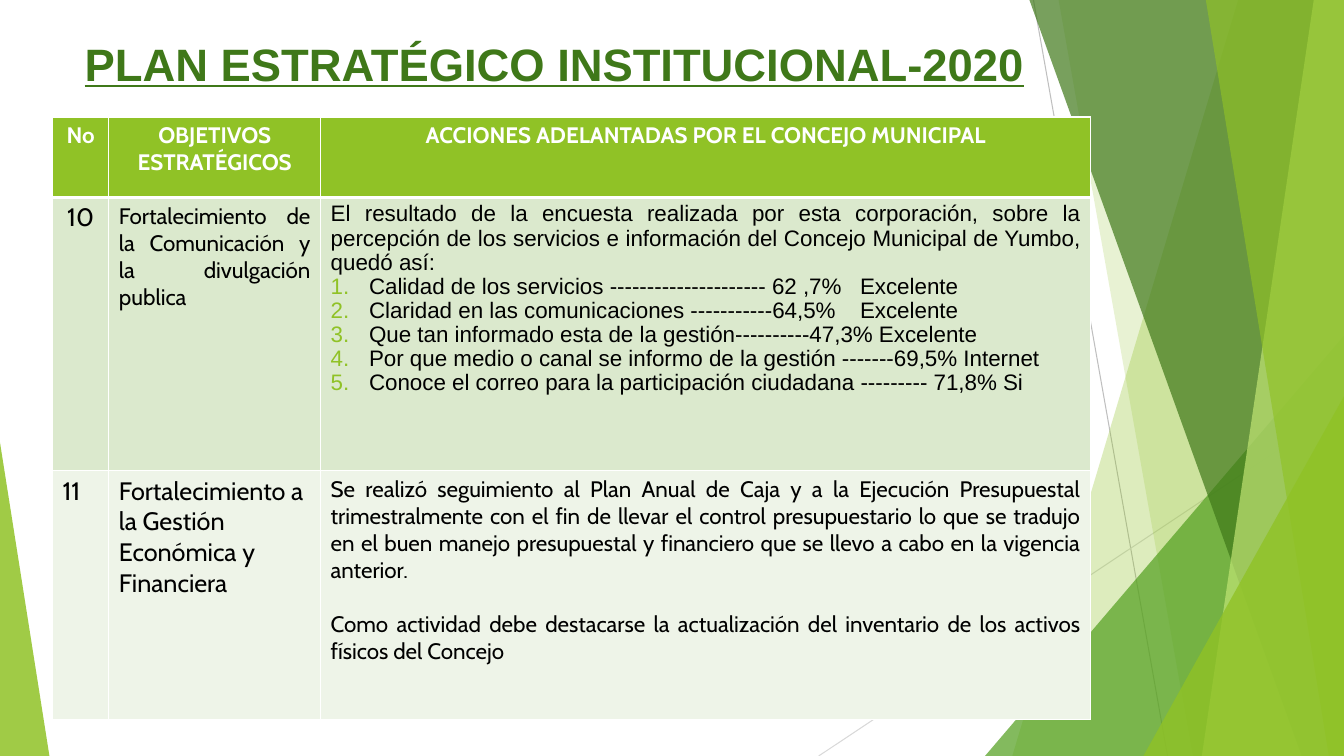
from lxml.etree import SubElement
from pptx import Presentation
from pptx.dml.color import RGBColor
from pptx.enum.shapes import MSO_CONNECTOR, MSO_SHAPE
from pptx.enum.text import MSO_ANCHOR, PP_ALIGN
from pptx.oxml.ns import qn
from pptx.util import Inches, Pt

WHITE = RGBColor(0xFF, 0xFF, 0xFF)
BLACK = RGBColor(0, 0, 0)
LIME = RGBColor(0x90, 0xC2, 0x26)
LIGHT_LIME = RGBColor(0xC0, 0xE4, 0x74)
GREEN = RGBColor(0x54, 0xA0, 0x21)
DARK_GREEN = RGBColor(0x3F, 0x78, 0x19)
ROW_GREEN = RGBColor(0xDB, 0xE9, 0xCD)
ROW_PALE = RGBColor(0xEE, 0xF4, 0xE8)
GRAY = RGBColor(0xBF, 0xBF, 0xBF)
LIGHT_GRAY = RGBColor(0xD9, 0xD9, 0xD9)

WIDTH, HEIGHT = 13.33, 7.5
CENTER, LEFT, JUSTIFY = PP_ALIGN.CENTER, PP_ALIGN.LEFT, PP_ALIGN.JUSTIFY

HEADERS = ["No", "OBJETIVOS ESTRATÉGICOS", "ACCIONES ADELANTADAS POR EL CONCEJO MUNICIPAL"]
SURVEY_INTRO = ("El resultado de la encuesta realizada por esta corporación, sobre la percepción "
                "de los servicios e información del Concejo Municipal de Yumbo, quedó así:")
SURVEY_RESULTS = [
    "Calidad de los servicios --------------------- 62 ,7%\tExcelente",
    "Claridad en las comunicaciones -----------64,5%\tExcelente",
    "Que tan informado esta de la gestión----------47,3% Excelente",
    "Por que medio o canal se informo de la gestión -------69,5% Internet",
    "Conoce el correo para la participación ciudadana --------- 71,8% Si",
]
BUDGET_ACTIONS = [
    "Se realizó seguimiento al Plan Anual de Caja y a la Ejecución Presupuestal "
    "trimestralmente con el fin de llevar el control presupuestario lo que se tradujo en el "
    "buen manejo presupuestal y financiero que se llevo a cabo en la vigencia anterior.",
    "Como actividad debe destacarse la actualización del inventario de los activos físicos "
    "del Concejo",
]


def paint(sp, color, opacity):
    """Fill a shape with a color at the given opacity in percent, without outline."""
    sp.shadow.inherit = False
    sp.line.fill.background()
    sp.fill.solid()
    sp.fill.fore_color.rgb = color
    clr = sp._element.spPr.find(qn("a:solidFill"))[0]
    SubElement(clr, qn("a:alpha"), val=str(opacity * 1000))


def add_thin_line(slide, start, end, color):
    line = slide.shapes.add_connector(MSO_CONNECTOR.STRAIGHT, *map(Inches, start + end))
    line.line.color.rgb = color
    line.line.width = Pt(0.75)
    SubElement(line._element.spPr, qn("a:effectLst"))


def add_band(slide, top_x, bottom_x, color, opacity):
    """Add a full-height band from a slanted left edge to the right edge of the slide."""
    points = [(top_x, 0), (WIDTH, 0), (WIDTH, HEIGHT), (bottom_x, HEIGHT)]
    points = [(Inches(x), Inches(y)) for x, y in points]
    builder = slide.shapes.build_freeform(*points[0], scale=1.0)
    builder.add_line_segments(points[1:], close=True)
    paint(builder.convert_to_shape(), color, opacity)


def add_corner(slide, left, top, width, apex, color, opacity):
    """Add a right triangle standing on the bottom edge of the slide."""
    sp = slide.shapes.add_shape(MSO_SHAPE.ISOSCELES_TRIANGLE, Inches(left), Inches(top),
                                Inches(width), Inches(HEIGHT - top))
    sp.adjustments[0] = apex
    paint(sp, color, opacity)


def add_backdrop(slide):
    add_thin_line(slide, (10.25, 0), (11.58, HEIGHT), GRAY)
    add_thin_line(slide, (WIDTH, 4.03), (8.12, HEIGHT), LIGHT_GRAY)
    add_band(slide, 12.28, 10.04, LIME, 30)
    add_band(slide, 10.5, 11.83, LIME, 20)
    add_corner(slide, 9.77, 3.33, 3.56, 1, GREEN, 72)
    add_band(slide, 10.21, 12.91, DARK_GREEN, 70)
    add_band(slide, 13.03, 11.92, LIGHT_LIME, 70)
    add_band(slide, 11.96, 13.18, LIME, 65)
    add_corner(slide, 11.34, 3.93, 1.99, 1, LIME, 80)
    add_corner(slide, 0, 4.39, 0.49, 0, LIME, 85)


def format_runs(p, size, font, color, bold=False):
    for r in p.runs:
        r.font.size = Pt(size)
        r.font.name = font
        r.font.color.rgb = color
        r.font.bold = bold


def place_title(slide, left, top, width, height):
    title = slide.shapes.title
    title.left, title.top = Inches(left), Inches(top)
    title.width, title.height = Inches(width), Inches(height)
    tf = title.text_frame
    tf.text = "PLAN ESTRATÉGICO INSTITUCIONAL-2020"
    tf.vertical_anchor = MSO_ANCHOR.MIDDLE
    p = tf.paragraphs[0]
    p.alignment = LEFT
    format_runs(p, 32.4, "Arial", DARK_GREEN, bold=True)
    p.runs[0].font.underline = True
    slide.shapes._spTree.append(title._element)


def style_cell(cell, fill, top=1, bottom=1):
    """Give a cell white borders, the top and bottom ones of given widths, and a fill."""
    tcPr = cell._tc.get_or_add_tcPr()
    for side, width in (("L", 1), ("R", 1), ("T", top), ("B", bottom)):
        ln = SubElement(tcPr, qn(f"a:ln{side}"), w=str(Pt(width)))
        solid = SubElement(ln, qn("a:solidFill"))
        SubElement(solid, qn("a:srgbClr"), val=str(WHITE))
    cell.fill.solid()
    cell.fill.fore_color.rgb = fill


def write_cell(cell, texts, align, size, font="Cabin", color=BLACK, bold=False):
    tf = cell.text_frame
    for i, text in enumerate(texts):
        p = tf.add_paragraph() if i else tf.paragraphs[0]
        p.text = text
        p.alignment = align
        format_runs(p, size, font, color, bold)
    return tf.paragraphs


def number_item(p):
    """Number a paragraph in lime and give it a tab stop for the rating."""
    pPr = p._p.get_or_add_pPr()
    pPr.set("marL", str(Inches(0.38)))
    pPr.set("indent", str(-Inches(0.38)))
    clr = SubElement(pPr, qn("a:buClr"))
    SubElement(clr, qn("a:srgbClr"), val=str(LIME))
    SubElement(pPr, qn("a:buFont"), typeface="Arial")
    SubElement(pPr, qn("a:buAutoNum"), type="arabicPeriod")
    tabs = SubElement(pPr, qn("a:tabLst"))
    SubElement(tabs, qn("a:tab"), pos=str(Inches(5.25)), algn="l")


def add_plan_table(slide, left, top, col_widths, row_heights):
    frame = slide.shapes.add_table(len(row_heights), len(col_widths), Inches(left), Inches(top),
                                   Inches(sum(col_widths)), Inches(sum(row_heights)))
    table = frame.table
    for col, width in zip(table.columns, col_widths):
        col.width = Inches(width)
    for row, height in zip(table.rows, row_heights):
        row.height = Inches(height)

    borders = [(LIME, 1, 3), (ROW_GREEN, 3, 1), (ROW_PALE, 1, 1)]
    for row, (fill, upper, lower) in zip(table.rows, borders):
        for cell in row.cells:
            style_cell(cell, fill, upper, lower)

    for cell, header in zip(table.rows[0].cells, HEADERS):
        write_cell(cell, [header], CENTER, 16, color=WHITE, bold=True)

    number, goal, actions = table.rows[1].cells
    write_cell(number, ["10"], CENTER, 18)
    write_cell(goal, ["Fortalecimiento de la Comunicación y la divulgación publica"], JUSTIFY, 16)
    survey = write_cell(actions, [SURVEY_INTRO] + SURVEY_RESULTS, JUSTIFY, 16, "Arial")
    for p in survey[1:]:
        number_item(p)
    for p in survey:
        p.line_spacing = 0.97

    number, goal, actions = table.rows[2].cells
    write_cell(number, ["11"], LEFT, 18)
    write_cell(goal, ["Fortalecimiento a la Gestión Económica y Financiera"], LEFT, 18)
    budget = write_cell(actions, BUDGET_ACTIONS, JUSTIFY, 16)
    budget[1].space_before = Pt(19.4)


def main():
    prs = Presentation()
    prs.slide_width, prs.slide_height = Inches(WIDTH), Inches(HEIGHT)
    slide = prs.slides.add_slide(prs.slide_layouts[5])
    add_backdrop(slide)
    add_plan_table(slide, 0.52, 1.16, [0.56, 2.1, 7.64], [0.8, 2.71, 2.47])
    place_title(slide, 0.74, 0.27, 10.08, 0.71)
    prs.save("out.pptx")


if __name__ == "__main__":
    main()
